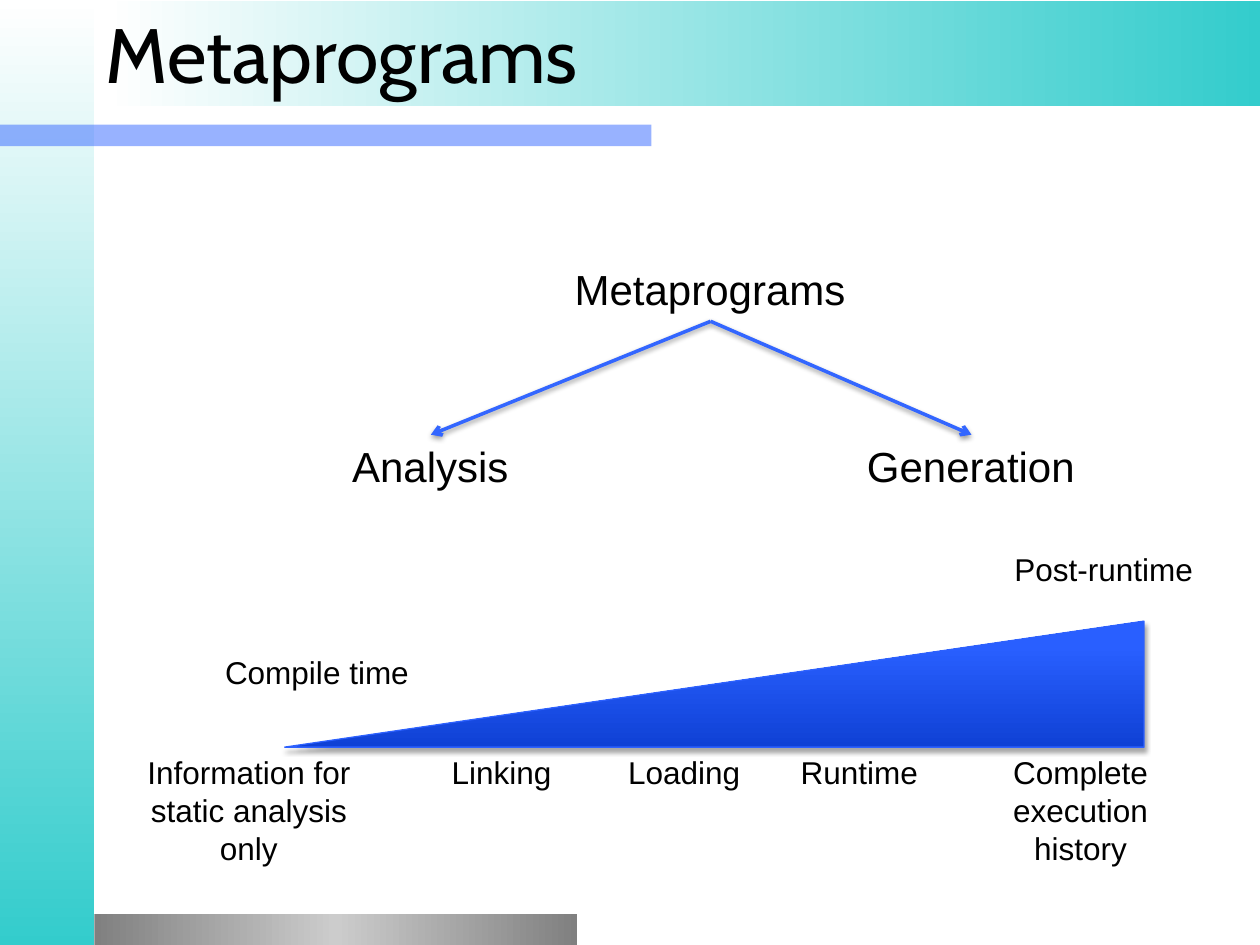
from pptx import Presentation
from pptx.dml.color import RGBColor
from pptx.enum.shapes import MSO_CONNECTOR as Connector, MSO_SHAPE as Shape
from pptx.enum.text import MSO_ANCHOR as Anchor, MSO_AUTO_SIZE as AutoSize, PP_ALIGN as Align
from pptx.oxml.ns import qn
from pptx.util import Inches, Pt
from lxml.etree import SubElement

COLORS = {
    "white": "FFFFFF", "black": "000000", "teal": "33CCCC", "blue": "3366FF",
    "gray": "808080", "silver": "CCCCCC", "wedge_dark": "0F41D5",
    "wedge_mid": "295FFF", "wedge_light": "2B60FF", "wedge_line": "2D61FE",
}


def set_gradient(shape, stops, angle):
    shape.fill.gradient()
    shape.fill.gradient_angle = (360 - angle) % 360
    stop_list = shape._element.spPr.find(qn("a:gradFill")).find(qn("a:gsLst"))
    for stop in list(stop_list):
        stop_list.remove(stop)
    for position, color in stops:
        stop = SubElement(stop_list, qn("a:gs"), pos=str(position * 1000))
        SubElement(stop, qn("a:srgbClr"), val=COLORS[color])


def add_shadow(shape, opacity, distance):
    effects = SubElement(shape._element.spPr, qn("a:effectLst"))
    shadow = SubElement(effects, qn("a:outerShdw"), blurRad=str(Pt(3.1)),
                        dist=str(Pt(distance)), dir="5400000", rotWithShape="0")
    color = SubElement(shadow, qn("a:srgbClr"), val=COLORS["black"])
    SubElement(color, qn("a:alpha"), val=str(opacity * 1000))


presentation = Presentation()
presentation.slide_width = Inches(10)
presentation.slide_height = Inches(7.5)
slide = presentation.slides.add_slide(presentation.slide_layouts[5])

bars = [
    ((0, 0, 0.75, 7.5), [(0, "white"), (100, "teal")], 90),
    ((0, 0.99, 5.17, 0.17), None, 0),
    ((0.75, 7.25, 3.83, 0.25), [(0, "gray"), (50, "silver"), (100, "gray")], 0),
    ((0.84, 0.01, 9.16, 0.83), [(0, "white"), (100, "teal")], 0),
]
for box, stops, angle in bars:
    bar = slide.shapes.add_shape(Shape.RECTANGLE, *map(Inches, box))
    bar.shadow.inherit = False
    bar.line.fill.background()
    if stops:
        set_gradient(bar, stops, angle)
    else:
        bar.fill.solid()
        bar.fill.fore_color.rgb = RGBColor.from_string(COLORS["blue"])
        color = bar._element.spPr.find(qn("a:solidFill"))[0]
        SubElement(color, qn("a:alpha"), val="50000")

title = slide.shapes.title
slide.shapes._spTree.append(title._element)
title.left, title.top, title.width, title.height = map(Inches, (0.74, 0, 9.26, 0.84))
title.text_frame.text = "Metaprograms"
title.text_frame.auto_size = AutoSize.NONE
title.text_frame.vertical_anchor = Anchor.MIDDLE
paragraph = title.text_frame.paragraphs[0]
paragraph.alignment = Align.LEFT
font = paragraph.runs[0].font
font.name, font.size = "Cabin", Pt(44)
font.color.rgb = RGBColor.from_string(COLORS["black"])

timeline = slide.shapes.add_group_shape()
tree = slide.shapes.add_group_shape()

wedge = timeline.shapes.add_shape(
    Shape.RIGHT_TRIANGLE, Inches(2.26), Inches(4.93), Inches(6.82), Inches(1))
wedge._element.spPr.xfrm.set("flipH", "1")
set_gradient(wedge, [(0, "wedge_dark"), (80, "wedge_mid"), (100, "wedge_light")], 270)
wedge.line.color.rgb = RGBColor.from_string(COLORS["wedge_line"])
wedge.line.width = Pt(0.75)
add_shadow(wedge, 35, 1.8)

labels = [
    (timeline, "Compile time", 18, (1.47, 5.13, 2.09, 0.4)),
    (timeline, "Post-runtime", 18, (7.85, 4.32, 1.82, 0.4)),
    (timeline, "Information for static analysis only", 18, (0.87, 5.93, 2.21, 1.01)),
    (timeline, "Linking", 18, (3.37, 5.93, 1.22, 0.4)),
    (timeline, "Loading", 18, (4.82, 5.93, 1.22, 0.4)),
    (timeline, "Runtime", 18, (6.21, 5.93, 1.22, 0.4)),
    (timeline, "Complete execution history", 18, (7.85, 5.93, 1.45, 1.01)),
    (tree, "Metaprograms", 24, (4.36, 2.04, 2.55, 0.5)),
    (tree, "Analysis", 24, (2.3, 3.45, 2.23, 0.5)),
    (tree, "Generation", 24, (6.59, 3.45, 2.23, 0.5)),
]
for group, text, size, box in labels:
    label = group.shapes.add_textbox(*map(Inches, box))
    label.text_frame.word_wrap = True
    label.text_frame.auto_size = AutoSize.SHAPE_TO_FIT_TEXT
    label.text_frame.text = text
    paragraph = label.text_frame.paragraphs[0]
    paragraph.alignment = Align.CENTER
    font = paragraph.runs[0].font
    font.name, font.size = "Arial", Pt(size)
    font.color.rgb = RGBColor.from_string(COLORS["black"])

for branch_x in (3.42, 7.71):
    arrow = tree.shapes.add_connector(
        Connector.STRAIGHT, Inches(5.64), Inches(2.55), Inches(branch_x), Inches(3.45))
    arrow.line.color.rgb = RGBColor.from_string(COLORS["blue"])
    arrow.line.width = Pt(2)
    SubElement(arrow._element.spPr.find(qn("a:ln")), qn("a:tailEnd"), type="arrow")
    add_shadow(arrow, 38, 1.6)

presentation.save("out.pptx")
